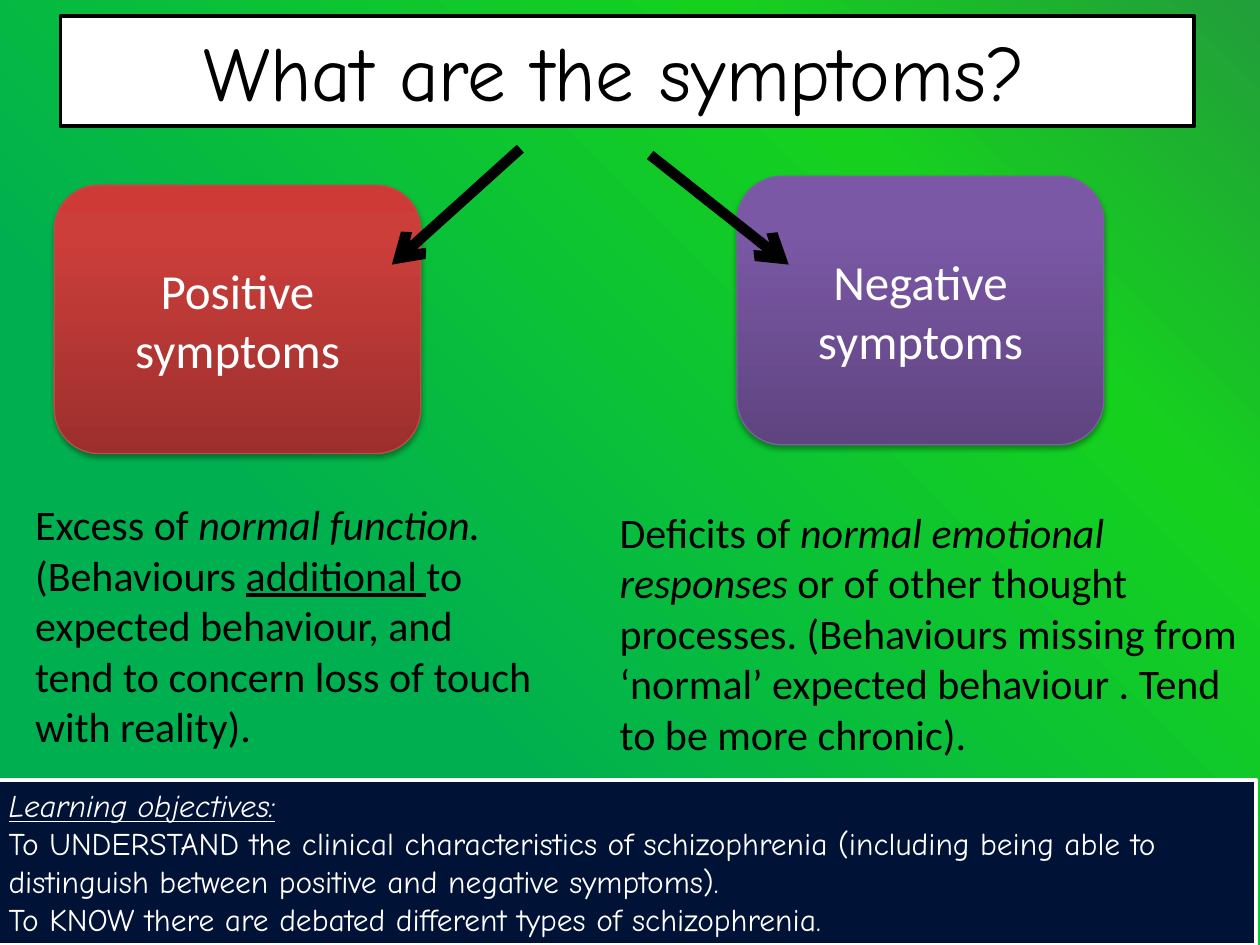
from pptx import Presentation
from pptx import util as u
from pptx.dml.color import RGBColor
from pptx.enum import shapes, text
from pptx.oxml import ns
from lxml import etree

PX = u.Inches(1) // 100
BLACK = RGBColor(0x00, 0x00, 0x00)
WHITE = RGBColor(0xFF, 0xFF, 0xFF)
NAVY = RGBColor(0x00, 0x12, 0x36)
GREEN = RGBColor(0x00, 0xB0, 0x50)
LIME = RGBColor(0x15, 0xD1, 0x1E)
FOREST = RGBColor(0x22, 0x9E, 0x3A)
PURPLES = [RGBColor(0x5F, 0x44, 0x80), RGBColor(0x7B, 0x58, 0xA6), RGBColor(0x7C, 0x57, 0xA8)]
PURPLE_EDGE = RGBColor(0x7D, 0x60, 0xA0)
REDS = [RGBColor(0x9C, 0x2F, 0x2D), RGBColor(0xCB, 0x3E, 0x3A), RGBColor(0xCE, 0x3B, 0x37)]
RED_EDGE = RGBColor(0xBF, 0x4C, 0x48)


def add_span(para, words, font="Calibri", size=24, color=BLACK, italic=False, underline=False):
    span = para.add_run()
    span.text = words
    span.font.name = font
    span.font.size = u.Pt(size)
    span.font.color.rgb = color
    span.font.italic = italic
    span.font.underline = underline


def paint_gradient(fill, owner, stops, angle):
    fill.gradient()
    fill.gradient_angle = angle
    stop_list = next(owner.iter(ns.qn("a:gsLst")))
    for old_stop in list(stop_list):
        stop_list.remove(old_stop)
    for percent, color in stops:
        stop = etree.SubElement(stop_list, ns.qn("a:gs"), pos=str(percent * 1000))
        etree.SubElement(stop, ns.qn("a:srgbClr"), val=str(color))


deck = Presentation()
deck.slide_width = 1000 * PX
deck.slide_height = 750 * PX
page = deck.slides.add_slide(deck.slide_layouts[5])
paint_gradient(page.background.fill, page.element,
               [(0, GREEN), (31, GREEN), (75, LIME), (100, FOREST)], 45)

title = page.shapes.title
title.left, title.top, title.width, title.height = 48 * PX, 13 * PX, 900 * PX, 87 * PX
title.fill.solid()
title.fill.fore_color.rgb = WHITE
title.line.color.rgb = BLACK
title.line.width = u.Pt(2.25)
title.text_frame.vertical_anchor = text.MSO_ANCHOR.MIDDLE
para = title.text_frame.paragraphs[0]
para.alignment = text.PP_ALIGN.CENTER
add_span(para, "What are the symptoms? ", font="Comic Neue", size=44)

objectives = page.shapes.add_shape(shapes.MSO_SHAPE.RECTANGLE, -3 * PX, 619 * PX, 1000 * PX, 131 * PX)
objectives.shadow.inherit = False
objectives.fill.solid()
objectives.fill.fore_color.rgb = NAVY
objectives.line.color.rgb = WHITE
objectives.line.width = u.Pt(2)
frame = objectives.text_frame
frame.vertical_anchor = text.MSO_ANCHOR.TOP
frame.auto_size = text.MSO_AUTO_SIZE.SHAPE_TO_FIT_TEXT
for index, words in enumerate([
    "Learning objectives:",
    "To UNDERSTAND the clinical characteristics of schizophrenia (including being able to "
    "distinguish between positive and negative symptoms).",
    "To KNOW there are debated different types of schizophrenia.",
]):
    para = frame.add_paragraph() if index else frame.paragraphs[0]
    para.alignment = text.PP_ALIGN.LEFT
    add_span(para, words, font="Comic Neue", size=18, color=WHITE,
             italic=index == 0, underline=index == 0)

for words, left, top, colors, edge in [
    ("Negative symptoms", 585, 140, PURPLES, PURPLE_EDGE),
    ("Positive symptoms", 43, 147, REDS, RED_EDGE),
]:
    card = page.shapes.add_shape(shapes.MSO_SHAPE.ROUNDED_RECTANGLE,
                                 left * PX, top * PX, 291 * PX, 213 * PX)
    paint_gradient(card.fill, card.element, zip([0, 80, 100], colors), 90)
    card.line.color.rgb = edge
    card.line.width = u.Pt(0.75)
    card.shadow.inherit = False
    effects = card.element.spPr.find(ns.qn("a:effectLst"))
    shadow = etree.SubElement(effects, ns.qn("a:outerShdw"), blurRad=str(u.Pt(3.1)),
                              dist=str(u.Pt(1.8)), dir="5400000", rotWithShape="0")
    shade = etree.SubElement(shadow, ns.qn("a:srgbClr"), val=str(BLACK))
    etree.SubElement(shade, ns.qn("a:alpha"), val="35000")
    card.text_frame.vertical_anchor = text.MSO_ANCHOR.MIDDLE
    para = card.text_frame.paragraphs[0]
    para.alignment = text.PP_ALIGN.CENTER
    add_span(para, words, size=28, color=WHITE)

for start_x, start_y, end_x, end_y in [(413, 118, 311, 210), (516, 123, 626, 210)]:
    arrow = page.shapes.add_connector(shapes.MSO_CONNECTOR.STRAIGHT,
                                      start_x * PX, start_y * PX, end_x * PX, end_y * PX)
    arrow.line.color.rgb = BLACK
    arrow.line.width = u.Pt(6)
    etree.SubElement(arrow.line._get_or_add_ln(), ns.qn("a:tailEnd"), type="arrow")
    etree.SubElement(arrow.element.spPr, ns.qn("a:effectLst"))

for left, top, width, paragraphs in [
    (18, 391, 419, [
        [("Excess of ", {}), ("normal function.", {"italic": True})],
        [("(Behaviours ", {}), ("additional ", {"underline": True}),
         ("to expected behaviour, and tend to concern loss of touch with reality).", {})],
    ]),
    (482, 397, 516, [
        [("Deficits of ", {}), ("normal emotional responses ", {"italic": True}),
         ("or of other thought processes. (Behaviours missing from ‘normal’ expected "
          "behaviour . Tend to be more chronic).", {})],
    ]),
]:
    box = page.shapes.add_textbox(left * PX, top * PX, width * PX, 212 * PX)
    frame = box.text_frame
    frame.word_wrap = True
    frame.auto_size = text.MSO_AUTO_SIZE.SHAPE_TO_FIT_TEXT
    for index, spans in enumerate(paragraphs):
        para = frame.add_paragraph() if index else frame.paragraphs[0]
        for words, style in spans:
            add_span(para, words, **style)

deck.save("out.pptx")
